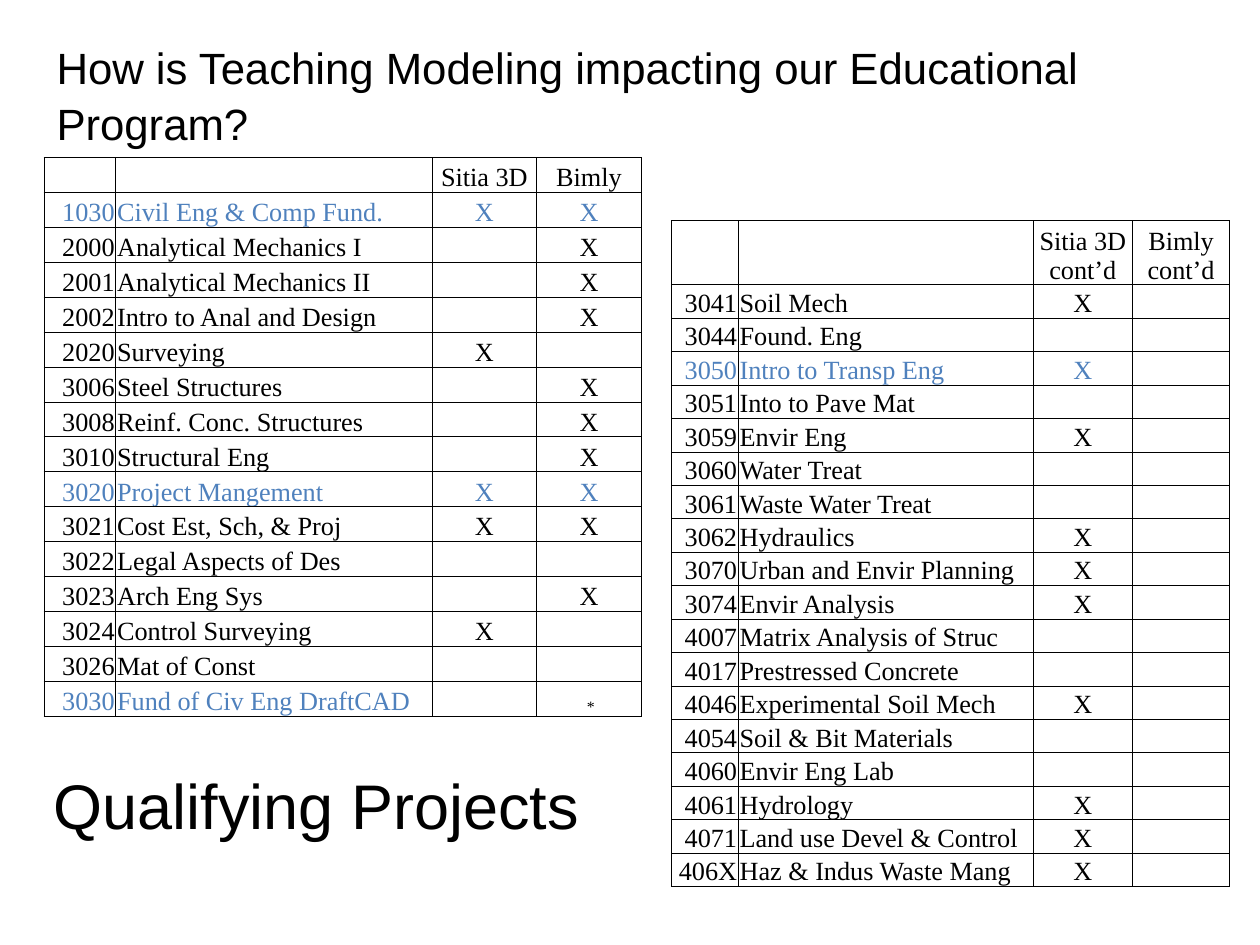
from lxml import etree
from pptx import Presentation
from pptx.dml.color import RGBColor
from pptx.enum.text import MSO_ANCHOR, PP_ALIGN
from pptx.oxml import parse_xml
from pptx.oxml.ns import nsdecls, qn
from pptx.util import Inches, Pt

LEFT, CENTER, RIGHT = PP_ALIGN.LEFT, PP_ALIGN.CENTER, PP_ALIGN.RIGHT
BOTTOM = MSO_ANCHOR.BOTTOM
COLORS = {"text": "000000", "highlight": "4F81BD", "border": "000000"}
COLUMN_ALIGN = [RIGHT, LEFT, CENTER, CENTER]
HIGHLIGHTED = {"1030", "3020", "3030", "3050"}

FIRST_COURSES = [
    ("", "", "Sitia 3D", "Bimly"),
    ("1030", "Civil Eng & Comp Fund.", "X", "X"),
    ("2000", "Analytical Mechanics I", "", "X"),
    ("2001", "Analytical Mechanics II", "", "X"),
    ("2002", "Intro to Anal and Design", "", "X"),
    ("2020", "Surveying", "X", ""),
    ("3006", "Steel Structures", "", "X"),
    ("3008", "Reinf. Conc. Structures", "", "X"),
    ("3010", "Structural Eng", "", "X"),
    ("3020", "Project Mangement", "X", "X"),
    ("3021", "Cost Est, Sch, & Proj", "X", "X"),
    ("3022", "Legal Aspects of Des", "", ""),
    ("3023", "Arch Eng Sys", "", "X"),
    ("3024", "Control Surveying", "X", ""),
    ("3026", "Mat of Const", "", ""),
    ("3030", "Fund of Civ Eng DraftCAD", "", " *"),
]
LATER_COURSES = [
    ("", "", "Sitia 3D cont’d", "Bimly cont’d"),
    ("3041", "Soil Mech", "X", ""),
    ("3044", "Found. Eng", "", ""),
    ("3050", "Intro to Transp Eng", "X", ""),
    ("3051", "Into to Pave Mat", "", ""),
    ("3059", "Envir Eng", "X", ""),
    ("3060", "Water Treat", "", ""),
    ("3061", "Waste Water Treat", "", ""),
    ("3062", "Hydraulics", "X", ""),
    ("3070", "Urban and Envir Planning", "X", ""),
    ("3074", "Envir Analysis", "X", ""),
    ("4007", "Matrix Analysis of Struc", "", ""),
    ("4017", "Prestressed Concrete", "", ""),
    ("4046", "Experimental Soil Mech", "X", ""),
    ("4054", "Soil & Bit Materials", "", ""),
    ("4060", "Envir Eng Lab", "", ""),
    ("4061", "Hydrology", "X", ""),
    ("4071", "Land use Devel & Control", "X", ""),
    ("406X", "Haz & Indus Waste Mang", "X", ""),
]
# left, top, width, height, header height, column widths, rows
TABLES = [
    (0.35, 1.25, 4.73, 4.44, 4.44 / 16, [0.57, 2.51, 0.83, 0.83], FIRST_COURSES),
    (5.33, 1.75, 4.43, 5.13, 0.51, [0.53, 2.34, 0.79, 0.77], LATER_COURSES),
]
# text, left, top, width, height, size
HEADINGS = [
    ("How is Teaching Modeling impacting our Educational Program?",
     0.35, 0.25, 9.41, 0.95, 25),
    ("Qualifying Projects", 0.33, 6, 4.67, 0.71, 36),
]


def style_font(font, name, size, color):
    font.name = name
    font.size = Pt(size)
    font.color.rgb = RGBColor.from_string(COLORS[color])


def add_borders(cell):
    properties = cell._tc.get_or_add_tcPr()
    for position, side in enumerate(["lnL", "lnR", "lnT", "lnB"]):
        properties.insert(position, parse_xml(
            f'<a:{side} {nsdecls("a")} w="{Pt(0.5)}"><a:solidFill>'
            f'<a:srgbClr val="{COLORS["border"]}"/></a:solidFill></a:{side}>'))


prs = Presentation()
prs.slide_width, prs.slide_height = Inches(10), Inches(7.5)
slide = prs.slides.add_slide(prs.slide_layouts[6])

for left, top, width, height, header_height, column_widths, courses in TABLES:
    table = slide.shapes.add_table(
        len(courses), len(column_widths),
        Inches(left), Inches(top), Inches(width), Inches(height)).table
    table.first_row = table.horz_banding = False
    for column, column_width in zip(table.columns, column_widths):
        column.width = Inches(column_width)
    course_height = (height - header_height) / (len(courses) - 1)
    for r, course in enumerate(courses):
        table.rows[r].height = Inches(course_height if r else header_height)
        row_color = "highlight" if course[0] in HIGHLIGHTED else "text"
        for c, entry in enumerate(course):
            cell = table.cell(r, c)
            cell.fill.background()
            add_borders(cell)
            cell.vertical_anchor = BOTTOM
            cell.margin_left = cell.margin_right = cell.margin_top = Inches(0.01)
            cell.margin_bottom = 0
            paragraph = cell.text_frame.paragraphs[0]
            paragraph.alignment = COLUMN_ALIGN[c]
            if not entry:
                # An empty cell takes its line height from the end mark
                etree.SubElement(paragraph._p, qn("a:endParaRPr"), sz="1500")
                continue
            paragraph.text = entry
            footnote = entry.endswith("*")
            style_font(paragraph.font, "Times New Roman", 9 if footnote else 15,
                       "text" if footnote else row_color)

for text, left, top, width, height, size in HEADINGS:
    frame = slide.shapes.add_textbox(
        Inches(left), Inches(top), Inches(width), Inches(height)).text_frame
    frame.word_wrap = True
    heading = frame.paragraphs[0]
    heading.text = text
    heading.line_spacing = 1.06
    style_font(heading.font, "Arial", size, "text")

prs.save("out.pptx")
